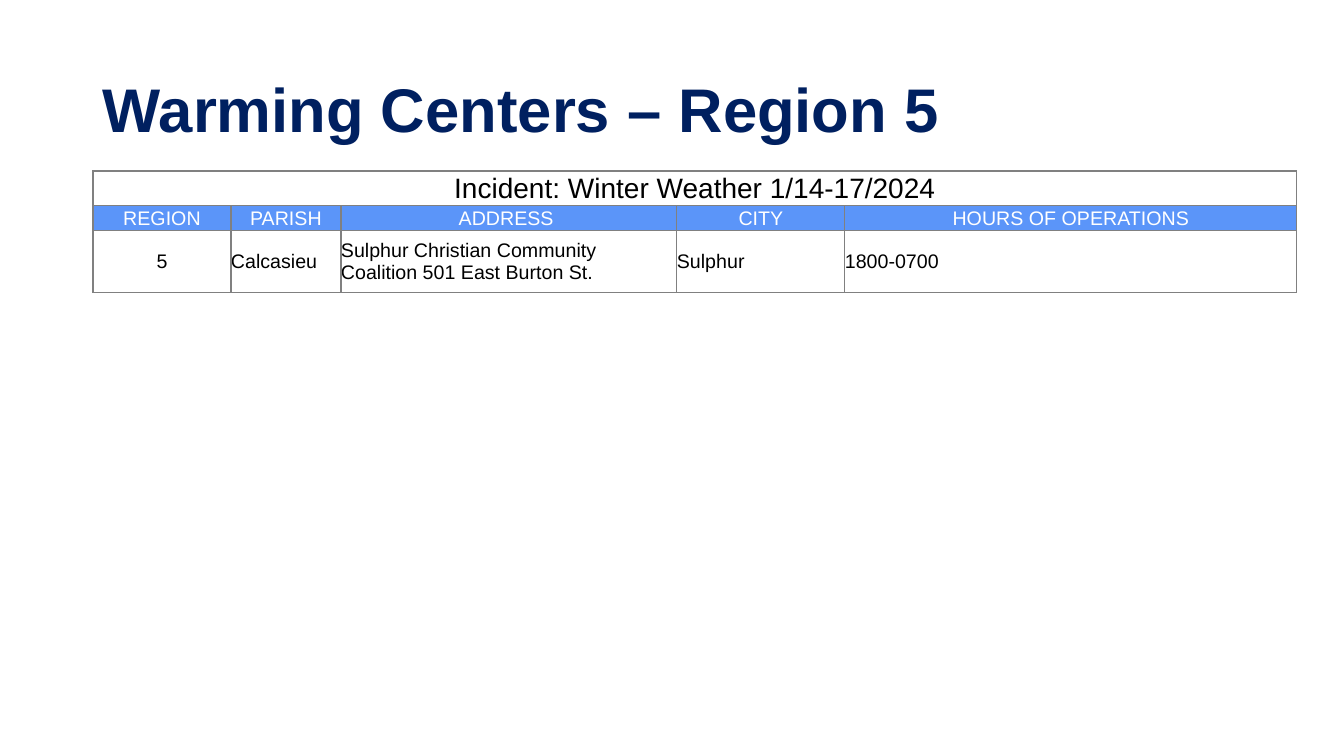
from lxml import etree
from pptx import Presentation
from pptx import util as u
from pptx.dml.color import RGBColor
from pptx.enum import text
from pptx.oxml.ns import qn

# Content
TITLE = "Warming Centers – Region 5"
INCIDENT = "Incident: Winter Weather 1/14-17/2024"
HEADINGS = ["REGION", "PARISH", "ADDRESS ", "CITY", "HOURS OF OPERATIONS"]
CENTERS = [
    ["5", "Calcasieu", "Sulphur Christian Community Coalition 501 East Burton St.",
     "Sulphur", "1800-0700"],
]

# Layout in px
SLIDE_SIZE = (1344, 756)
TITLE_BOX = (93, 40, 1159, 146)
TABLE_LEFT, TABLE_TOP = 93, 171
COLUMN_WIDTHS = [138, 110, 336, 168, 452]
INCIDENT_HEIGHT, HEADING_HEIGHT, CENTER_HEIGHT = 32, 24, 62

FONT = "Arial"
NAVY = RGBColor(0x00, 0x20, 0x60)
BLUE = RGBColor(0x5B, 0x95, 0xF9)
GRAY = RGBColor(0x80, 0x80, 0x80)
BLACK = RGBColor(0x00, 0x00, 0x00)
WHITE = RGBColor(0xFF, 0xFF, 0xFF)
CENTER, LEFT = text.PP_ALIGN.CENTER, text.PP_ALIGN.LEFT


def px(length):
    return u.Emu(round(length * 914400 / 100.8))


def write(paragraph, words, size, color, bold=False):
    run = paragraph.add_run()
    run.text = words
    run.font.name = FONT
    run.font.size = u.Pt(size)
    run.font.bold = bold
    run.font.color.rgb = color


def add_borders(cell):
    properties = cell._tc.get_or_add_tcPr()
    for position, side in enumerate(("lnL", "lnR", "lnT", "lnB")):
        line = etree.Element(qn(f"a:{side}"), w=str(u.Pt(1)))
        fill = etree.SubElement(line, qn("a:solidFill"))
        etree.SubElement(fill, qn("a:srgbClr"), val=str(GRAY))
        properties.insert(position, line)


def fill_cell(cell, words, size, color, fill, align, inset):
    cell.vertical_anchor = text.MSO_ANCHOR.MIDDLE
    cell.margin_left = cell.margin_right = cell.margin_top = px(inset)
    cell.margin_bottom = 0
    if fill is None:
        cell.fill.background()
    else:
        cell.fill.solid()
        cell.fill.fore_color.rgb = fill
    paragraph = cell.text_frame.paragraphs[0]
    paragraph.alignment = align
    if words:
        write(paragraph, words, size, color)
    add_borders(cell)


prs = Presentation()
prs.slide_width, prs.slide_height = map(px, SLIDE_SIZE)
slide = prs.slides.add_slide(prs.slide_layouts[6])

# Title
title = slide.shapes.add_textbox(*map(px, TITLE_BOX)).text_frame
title.word_wrap = True
title.vertical_anchor = text.MSO_ANCHOR.MIDDLE
title.paragraphs[0].line_spacing = 0.9
write(title.paragraphs[0], TITLE, 44, NAVY, bold=True)

# Table grid
row_heights = [INCIDENT_HEIGHT, HEADING_HEIGHT] + [CENTER_HEIGHT] * len(CENTERS)
table = slide.shapes.add_table(
    len(row_heights), len(COLUMN_WIDTHS), px(TABLE_LEFT), px(TABLE_TOP),
    px(sum(COLUMN_WIDTHS)), px(sum(row_heights))).table
table.first_row = table.horz_banding = False
for column, width in zip(table.columns, COLUMN_WIDTHS):
    column.width = px(width)
for row, height in zip(table.rows, row_heights):
    row.height = px(height)

# Incident row, headings and warming centers
last = len(COLUMN_WIDTHS) - 1
table.cell(0, 0).merge(table.cell(0, last))
for c, heading in enumerate(HEADINGS):
    fill_cell(table.cell(0, c), "" if c else INCIDENT, 20, BLACK, None, CENTER, 1)
    fill_cell(table.cell(1, c), heading, 14, WHITE, BLUE, CENTER, 1)
for r, center in enumerate(CENTERS, start=2):
    for c, words in enumerate(center):
        fill_cell(table.cell(r, c), words, 14, BLACK, WHITE, LEFT if c else CENTER, 0)

prs.save("out.pptx")
